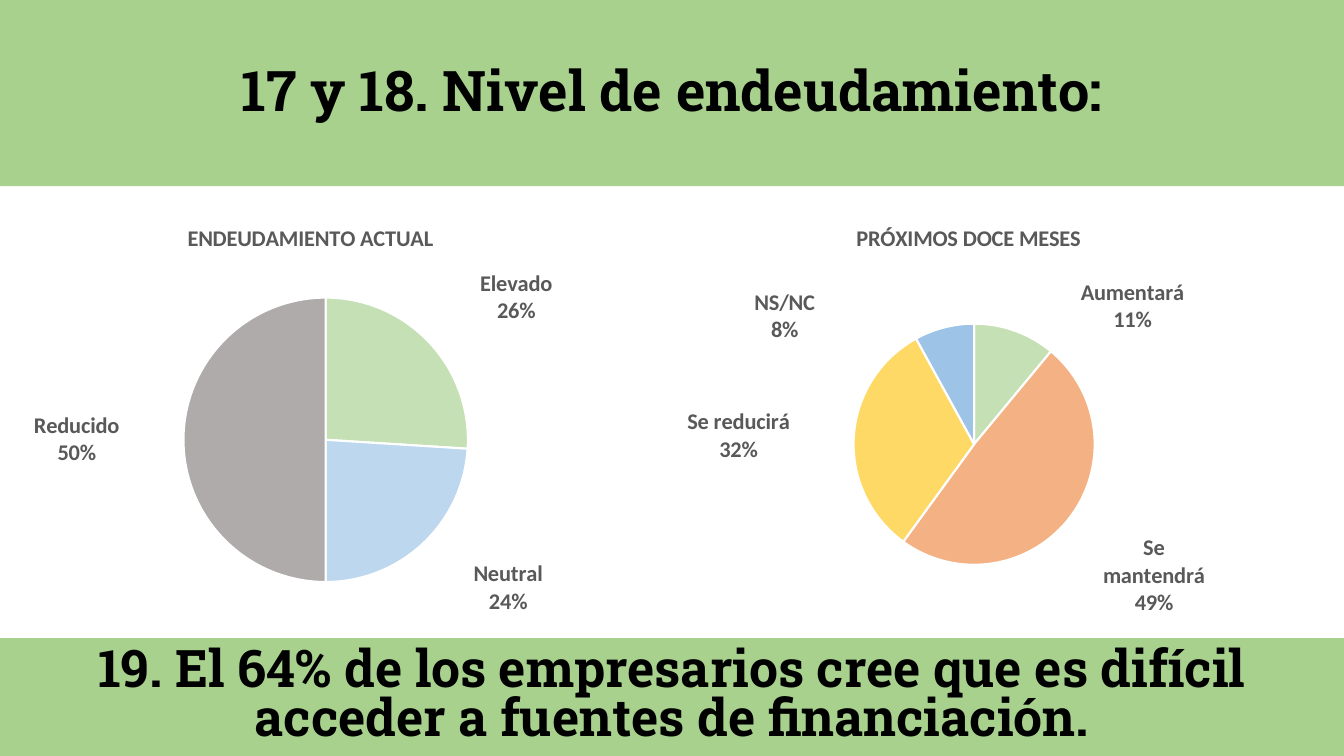
from copy import deepcopy

from lxml import etree
from pptx import Presentation
from pptx.chart import data as chartdata
from pptx.dml import color
from pptx.enum import chart as charts, shapes, text
from pptx.oxml import ns
from pptx.util import Pt

WIDTH, HEIGHT = 960, 540
GREEN, BLACK, GREY, WHITE = "A9D18E", "000000", "595959", "FFFFFF"


def paint(target, colour):
    """Give a fill, or a font's fill, one solid colour."""
    target.solid()
    target.fore_color.rgb = color.RGBColor.from_string(colour)


def style_font(font, name, size, colour):
    font.name, font.size, font.bold = name, Pt(size), True
    paint(font.fill, colour)


def add_element(parent, tag, index=None, **attributes):
    element = etree.Element(ns.qn(tag), **attributes)
    parent.insert(len(parent) if index is None else index, element)
    return element


def set_layout(parent, index, inner=False, **fractions):
    """Place a chart part by fractions of the chart's size."""
    for old in parent.findall(ns.qn("c:layout")):
        parent.remove(old)
    layout = add_element(parent, "c:layout", index)
    manual = add_element(layout, "c:manualLayout")
    if inner:
        add_element(manual, "c:layoutTarget", val="inner")
    if "mode" in fractions:
        mode = fractions.pop("mode")
        add_element(manual, "c:xMode", val=mode)
        add_element(manual, "c:yMode", val=mode)
    for name, value in fractions.items():
        add_element(manual, f"c:{name}", val=str(value))


def add_band(page, box, words, size, line_spacing):
    """Full-width green band with a centred heading."""
    band = page.shapes.add_shape(shapes.MSO_SHAPE.RECTANGLE, *map(Pt, box))
    band.shadow.inherit = False
    paint(band.fill, GREEN)
    band.line.fill.background()
    frame = band.text_frame
    frame.word_wrap = True
    frame.vertical_anchor = text.MSO_ANCHOR.MIDDLE
    para = frame.paragraphs[0]
    para.text = words
    para.alignment = text.PP_ALIGN.CENTER
    para.line_spacing = line_spacing
    style_font(para.font, "Roboto Slab", size, BLACK)


def add_labels(series, offsets):
    """Category and percentage outside each slice, shifted by its offset."""
    labels = series.data_labels
    style_font(labels.font, "Calibri", 16, GREY)
    labels.number_format = "0%"
    labels.number_format_is_linked = False
    labels.position = charts.XL_LABEL_POSITION.OUTSIDE_END
    labels.show_value = False
    labels.show_category_name = labels.show_percentage = True

    group = labels._element
    for leader in group.findall(ns.qn("c:showLeaderLines")):
        group.remove(leader)
    add_element(group, "c:separator").text = "\n"
    shared = list(group)
    for number, (x, y) in enumerate(offsets):
        label = add_element(group, "c:dLbl", number)
        add_element(label, "c:idx", val=str(number))
        set_layout(label, 1, x=x, y=y)
        label.extend(deepcopy(part) for part in shared)
    add_element(group, "c:showLeaderLines", val="0")


def add_pie(page, box, title, pie, slices):
    """Pie chart; pie holds the plot's left, top, width, height fractions."""
    names, values, colours, offsets = zip(*slices)
    data = chartdata.CategoryChartData()
    data.categories = names
    data.add_series("Series 1", values)
    chart = page.shapes.add_chart(
        charts.XL_CHART_TYPE.PIE, *map(Pt, box), data).chart
    chart.font.name, chart.font.size = "Calibri", Pt(10)
    chart.has_legend = False

    # Title, level with the left edge of the pie
    chart.has_title = True
    para = chart.chart_title.text_frame.paragraphs[0]
    para.text = title
    style_font(para.font, "Calibri", 16, GREY)
    chart.chart_title.include_in_layout = False
    left, top, width, height = pie
    set_layout(chart.chart_title._element, 1, mode="edge", x=left, y=0.05)

    # Slices
    set_layout(chart._chartSpace.chart.plotArea, 0, inner=True, mode="edge",
               x=left, y=top, w=width, h=height)
    plot = chart.plots[0]
    plot.vary_by_categories = True
    series = plot.series[0]
    for number, colour in enumerate(colours):
        look = series.points[number].format
        paint(look.fill, colour)
        paint(look.line.fill, WHITE)
        look.line.width = Pt(1.5)
    add_labels(series, offsets)


def main():
    deck = Presentation()
    deck.slide_width, deck.slide_height = Pt(WIDTH), Pt(HEIGHT)
    page = deck.slides.add_slide(deck.slide_layouts[6])

    # Heading
    add_band(page, (0, 0, WIDTH, 133), "17 y 18. Nivel de endeudamiento:",
             40, 0.9)

    # Debt now and in the next twelve months
    top, width, height = 140.4, 414.7, 313.2
    add_pie(page, (10.8, top, width, height), "ENDEUDAMIENTO ACTUAL",
            (0.29, 0.23, 0.49, 0.65), [
                ("Elevado", 26, "C5E0B4", (0.08, -0.03)),
                ("Neutral", 24, "BDD7EE", (0.08, 0.03)),
                ("Reducido", 50, "AFABAB", (-0.1, 0)),
            ])
    add_pie(page, (480.2, top, width, height), "PRÓXIMOS DOCE MESES",
            (0.31, 0.29, 0.42, 0.55), [
                ("Aumentará", 11, "C5E0B4", (0.11, 0.02)),
                ("Se mantendrá", 49, "F4B183", (0.05, 0.03)),
                ("Se reducirá", 32, "FFD966", (-0.1, 0)),
                ("NS/NC", 8, "9DC3E6", (-0.22, 0.05)),
            ])

    # Closing finding
    add_band(page, (0, 455.8, WIDTH, HEIGHT - 455.8),
             "19. El 64% de los empresarios cree que es difícil "
             "acceder a fuentes de financiación.", 37, 0.8)

    deck.save("out.pptx")


if __name__ == "__main__":
    main()
